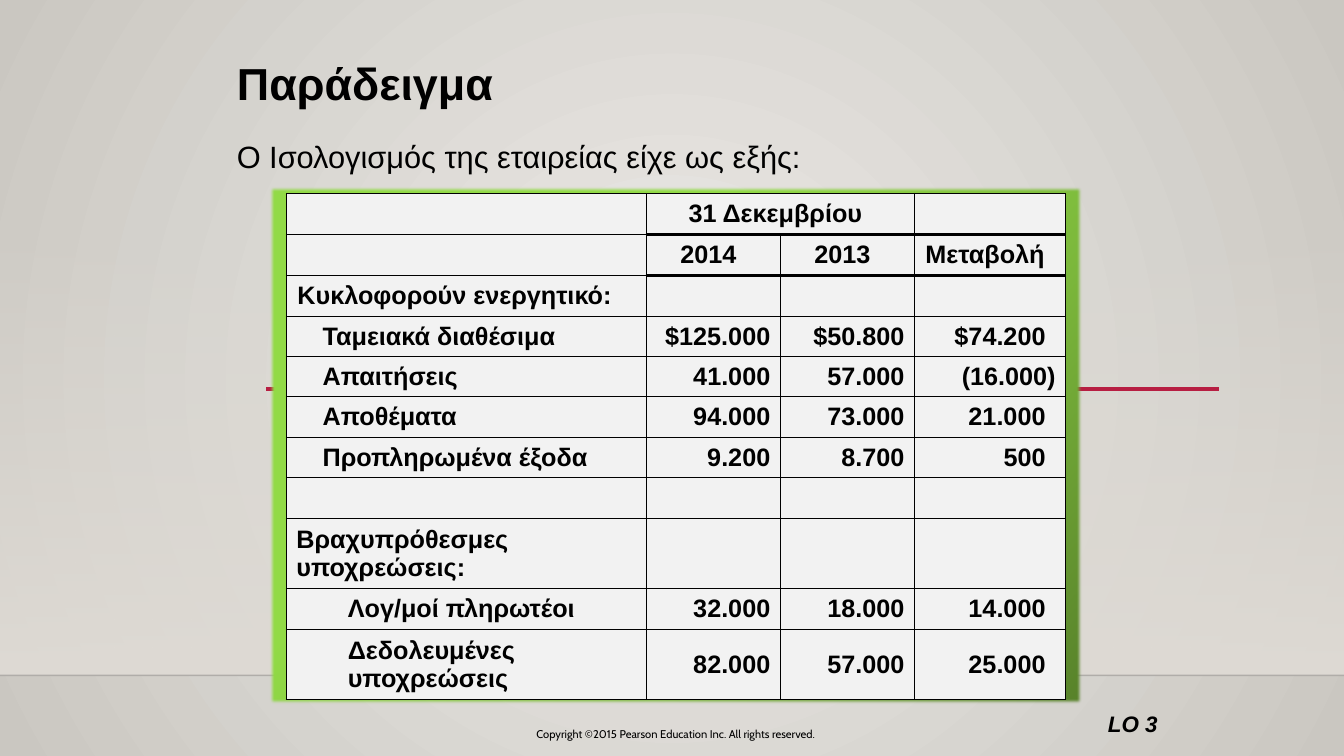
from lxml import etree
from pptx import Presentation
from pptx.dml.color import RGBColor
from pptx.enum.shapes import MSO_CONNECTOR, MSO_SHAPE
from pptx.enum.text import MSO_ANCHOR, PP_ALIGN
from pptx.oxml import parse_xml
from pptx.oxml.ns import nsdecls, qn
from pptx.util import Inches, Pt

LEFT, CENTER, RIGHT = PP_ALIGN.LEFT, PP_ALIGN.CENTER, PP_ALIGN.RIGHT
TOP, MIDDLE = MSO_ANCHOR.TOP, MSO_ANCHOR.MIDDLE
RECT, STRAIGHT = MSO_SHAPE.RECTANGLE, MSO_CONNECTOR.STRAIGHT

THEME = {
    "font": "Arial", "small_font": "Cabin",
    "text": "000000", "cell": "F2F2F2", "accent": "B71E42", "edge": "000001",
    "title": 32, "lead": 22, "table": 18, "tag": 16, "small": 8,
}


def gradient(parent, stops, direction):
    """Replace the empty fill of parent with a gradient of (percent, colour, alpha) stops."""
    gs = "".join(
        f'<a:gs pos="{pos * 1000}"><a:srgbClr val="{color}">'
        f'<a:alpha val="{alpha * 1000}"/></a:srgbClr></a:gs>'
        for pos, color, alpha in stops)
    fill = parse_xml(f'<a:gradFill {nsdecls("a")} rotWithShape="1">'
                     f'<a:gsLst>{gs}</a:gsLst>{direction}</a:gradFill>')
    parent.replace(parent.find(qn("a:noFill")), fill)


def write(tf, text, size, font=THEME["font"], align=LEFT, bold=False, italic=False):
    """Put one formatted paragraph into a text frame."""
    p = tf.paragraphs[0]
    p.text = text
    p.alignment = align
    p.space_before = Pt(0)
    p.font.name, p.font.size = font, Pt(size)
    p.font.bold, p.font.italic = bold, italic
    p.font.color.rgb = RGBColor.from_string(THEME["text"])
    return p


prs = Presentation()
prs.slide_width, prs.slide_height = Inches(13.33), Inches(7.5)
s = prs.slides.add_slide(prs.slide_layouts[5])

# Background
s.background.fill.background()
gradient(s.background.fill._xPr, [(0, "ECEAE7", 100), (100, "CAC7C1", 100)],
         '<a:path path="circle"><a:fillToRect l="50000" t="50000" r="50000" b="50000"/></a:path>')

# Wall shade and green table frame
panels = [
    (0, 2.21, 13.33, 4.49, [(0, "DFDBD5", 0), (100, "DFDBD5", 100)], 90),
    (2.67, 1.85, 8.07, 5.14,
     [(0, "57812A", 100), (33, "7BB73B", 100), (65, "92DA46", 100)], 225),
]
rules = [(0, 13.33, 6.7, "edge", 1, 20), (2.64, 12.09, 3.86, "accent", 2.5, 100)]
for x, y, w, h, stops, angle in panels:
    sp = s.shapes.add_shape(RECT, Inches(x), Inches(y), Inches(w), Inches(h))
    sp.shadow.inherit = False
    sp.line.fill.background()
    sp.fill.background()
    gradient(sp._element.spPr, stops, f'<a:lin ang="{angle * 60000}" scaled="0"/>')
    # Horizontal rules lie between the wall and the frame
    while rules and angle == 90:
        x1, x2, y1, color, width, alpha = rules.pop(0)
        line = s.shapes.add_connector(STRAIGHT, Inches(x1), Inches(y1), Inches(x2), Inches(y1))
        line.line.width = Pt(width)
        line.line.color.rgb = RGBColor.from_string(THEME[color])
        clr = line._element.spPr.find(".//" + qn("a:srgbClr"))
        etree.SubElement(clr, qn("a:alpha")).set("val", str(alpha * 1000))
        etree.SubElement(line._element.spPr, qn("a:effectLst"))

# Soft edge on the frame
effects = sp._element.spPr.find(qn("a:effectLst"))
etree.SubElement(effects, qn("a:softEdge")).set("rad", str(Inches(0.03)))

# Title
title = s.shapes.title
title.left, title.top, title.width, title.height = (Inches(v) for v in (2.25, 0.5, 9.08, 0.64))
title.text_frame.vertical_anchor = TOP
write(title.text_frame, "Παράδειγμα", THEME["title"], bold=True)

# Table: label, indent, 2014, 2013, change
rows = [
    ("", 0, "31 Δεκεμβρίου", "", ""),
    ("", 0, "2014", "2013", "Μεταβολή"),
    ("Κυκλοφορούν ενεργητικό:", 0.01, "", "", ""),
    ("Ταμειακά διαθέσιμα", 0.26, "$125.000", "$50.800", "$74.200"),
    ("Απαιτήσεις", 0.26, "41.000", "57.000", "(16.000)"),
    ("Αποθέματα", 0.26, "94.000", "73.000", "21.000"),
    ("Προπληρωμένα έξοδα", 0.26, "9.200", "8.700", "500"),
    ("", 0, "", "", ""),
    ("Βραχυπρόθεσμες υποχρεώσεις:", 0, "", "", ""),
    ("Λογ/μοί πληρωτέοι", 0.51, "32.000", "18.000", "14.000"),
    ("Δεδολευμένες υποχρεώσεις", 0.51, "82.000", "57.000", "25.000"),
]
TALL_ROWS = (8, 10)
HEADER_ROWS = 2
table = s.shapes.add_table(len(rows), 4, Inches(2.84), Inches(1.92), Inches(7.74), Inches(5)).table
table.first_row = table.horz_banding = False
for col, width in zip(table.columns, (3.57, 1.33, 1.33, 1.5)):
    col.width = Inches(width)
table.cell(0, 1).merge(table.cell(0, 2))

for i, (label, indent, *values) in enumerate(rows):
    table.rows[i].height = Inches(0.7 if i in TALL_ROWS else 0.4)
    for j, text in enumerate([label, *values]):
        cell = table.cell(i, j)
        cell.vertical_anchor = MIDDLE
        header = i < HEADER_ROWS
        if j and (header or (j == 3 and not text.startswith("("))):
            cell.margin_right = Inches(0.2)
        if text:
            align = LEFT if j == 0 else CENTER if header else RIGHT
            p = write(cell.text_frame, text, THEME["table"], align=align, bold=True)
            if j == 0:
                p._p.get_or_add_pPr().set("marL", str(Inches(indent)))
        # Borders, heavier around the year headings
        tcPr = cell._tc.get_or_add_tcPr()
        for side in "LRTB":
            heavy = j and ((side == "B" and header) or (side == "T" and i in (1, 2)))
            tcPr.append(parse_xml(
                f'<a:ln{side} {nsdecls("a")} w="{Pt(2.25 if heavy else 1)}"><a:solidFill>'
                f'<a:srgbClr val="{THEME["text"]}"/></a:solidFill></a:ln{side}>'))
        cell.fill.solid()
        cell.fill.fore_color.rgb = RGBColor.from_string(THEME["cell"])

# Lead sentence, learning objective tag and copyright line
texts = [
    (2.25, 1.17, 8.92, 0.62, 0.1, "Ο Ισολογισμός της εταιρείας είχε ως εξής:",
     dict(size=THEME["lead"]), 1.25),
    (10.75, 7, 0.83, 0.37, 0.05, "LO 3",
     dict(size=THEME["tag"], align=RIGHT, bold=True, italic=True), 1),
    (4.33, 7.17, 4.75, 0.25, 0.05, "Copyright ©2015 Pearson Education Inc. All rights reserved.",
     dict(size=THEME["small"], font=THEME["small_font"], align=CENTER), 1),
]
for x, y, w, h, inset, text, style, spacing in texts:
    tf = s.shapes.add_textbox(Inches(x), Inches(y), Inches(w), Inches(h)).text_frame
    tf.word_wrap = True
    tf.margin_top = tf.margin_bottom = Inches(inset)
    write(tf, text, **style).line_spacing = spacing

prs.save("out.pptx")
